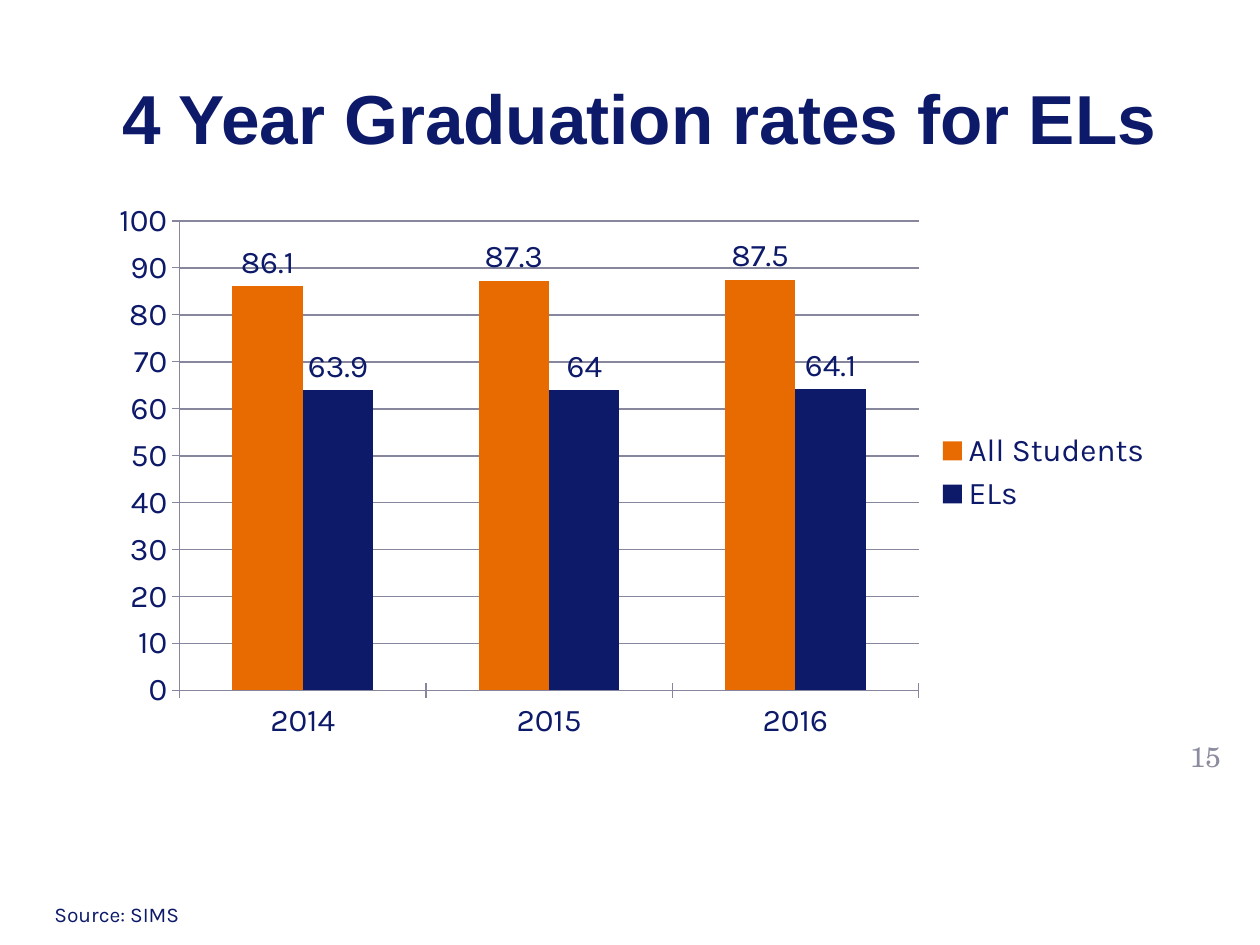
from lxml import etree
from pptx import Presentation
from pptx.chart.data import CategoryChartData
from pptx.dml.color import RGBColor
from pptx.enum.chart import XL_CHART_TYPE, XL_LABEL_POSITION, XL_LEGEND_POSITION, XL_TICK_MARK
from pptx.enum.text import MSO_ANCHOR, PP_ALIGN
from pptx.oxml.ns import qn
from pptx.util import Emu, Pt

CLUSTERED = XL_CHART_TYPE.COLUMN_CLUSTERED
OUTSIDE_END = XL_LABEL_POSITION.OUTSIDE_END
LEGEND_RIGHT = XL_LEGEND_POSITION.RIGHT
CROSS = XL_TICK_MARK.CROSS
LEFT, CENTER = PP_ALIGN.LEFT, PP_ALIGN.CENTER
TOP, MIDDLE = MSO_ANCHOR.TOP, MSO_ANCHOR.MIDDLE

EMU_PER_PX = 914400 / 126
NAVY, ORANGE, GRAY, LINE_GRAY = "0D1969", "E86B01", "8C8CA1", "86869D"
TITLE_FONT, BODY_FONT, NUMBER_FONT = "Arial", "Karla", "TeX Gyre Schola"


def px(length):
    return Emu(round(length * EMU_PER_PX))


def color(value):
    return RGBColor.from_string(value)


def style_font(font, name, size, value, bold=False):
    font.name = name
    font.size = Pt(size)
    font.bold = bold
    font.color.rgb = color(value)


def style_line(line, width):
    line.color.rgb = color(LINE_GRAY)
    line.width = Pt(width)


def place_plot(chart, x, y, w, h):
    """Fix the inner plot area, in fractions of the chart."""
    plot_area = chart._chartSpace.chart.plotArea
    for old_layout in plot_area.findall(qn("c:layout")):
        plot_area.remove(old_layout)
    layout = etree.Element(qn("c:layout"))
    manual = etree.SubElement(layout, qn("c:manualLayout"))
    settings = {"layoutTarget": "inner", "xMode": "edge", "yMode": "edge",
                "x": x, "y": y, "w": w, "h": h}
    for tag, value in settings.items():
        etree.SubElement(manual, qn(f"c:{tag}")).set("val", str(value))
    plot_area.insert(0, layout)


class SlideBuilder:
    """Holds the slide and adds elements placed by left, top, width, height in px."""

    def __init__(self, presentation):
        self.slide = presentation.slides.add_slide(presentation.slide_layouts[5])

    def fill_text(self, shape, text, font, size, value, align, anchor, bold=False):
        frame = shape.text_frame
        frame.word_wrap = True
        frame.vertical_anchor = anchor
        paragraph = frame.paragraphs[0]
        paragraph.text = text
        paragraph.alignment = align
        style_font(paragraph.font, font, size, value, bold)

    def title(self, text, box):
        shape = self.slide.shapes.title
        shape.left, shape.top, shape.width, shape.height = map(px, box)
        self.fill_text(shape, text, TITLE_FONT, 39.6, NAVY, CENTER, MIDDLE, bold=True)

    def text(self, text, box, font, size, value, align=LEFT, anchor=TOP):
        shape = self.slide.shapes.add_textbox(*map(px, box))
        self.fill_text(shape, text, font, size, value, align, anchor)

    def column_chart(self, categories, series, box):
        """Add clustered columns; series holds (name, values, color) tuples."""
        data = CategoryChartData()
        data.categories = categories
        for name, values, _ in series:
            data.add_series(name, values)
        chart = self.slide.shapes.add_chart(CLUSTERED, *map(px, box), data).chart
        chart.has_title = False
        style_font(chart.font, BODY_FONT, 18, NAVY)
        chart.has_legend = True
        chart.legend.position = LEGEND_RIGHT
        chart.legend.include_in_layout = False

        for axis in (chart.category_axis, chart.value_axis):
            axis.major_tick_mark = CROSS
            style_line(axis.format.line, 0.75)
        value_axis = chart.value_axis
        value_axis.minimum_scale, value_axis.maximum_scale = 0, 100
        value_axis.major_unit = 10
        value_axis.has_major_gridlines = True
        style_line(value_axis.major_gridlines.format.line, 1)

        plot = chart.plots[0]
        plot.vary_by_categories = False
        plot.gap_width = 150
        plot.overlap = 0
        for column, (_, _, value) in zip(plot.series, series):
            column.format.fill.solid()
            column.format.fill.fore_color.rgb = color(value)
            labels = column.data_labels
            labels.show_value = True
            labels.position = OUTSIDE_END
        place_plot(chart, 0.08, 0.05, 0.69, 0.84)


def main():
    presentation = Presentation()
    presentation.slide_width, presentation.slide_height = px(1260), px(945)
    builder = SlideBuilder(presentation)
    builder.text("15", (1169, 725, 73, 63), NUMBER_FONT, 16, GRAY, CENTER, MIDDLE)
    builder.title(" 4 Year Graduation rates for ELs", (63, 38, 1134, 158))
    builder.column_chart(
        ["2014", "2015", "2016"],
        [("All Students", (86.1, 87.3, 87.5), ORANGE),
         ("ELs", (63.9, 64, 64.1), NAVY)],
        (94, 193, 1071, 559))
    builder.text("Source: SIMS", (42, 895, 620, 38), BODY_FONT, 12, NAVY)
    presentation.save("out.pptx")


if __name__ == "__main__":
    main()
